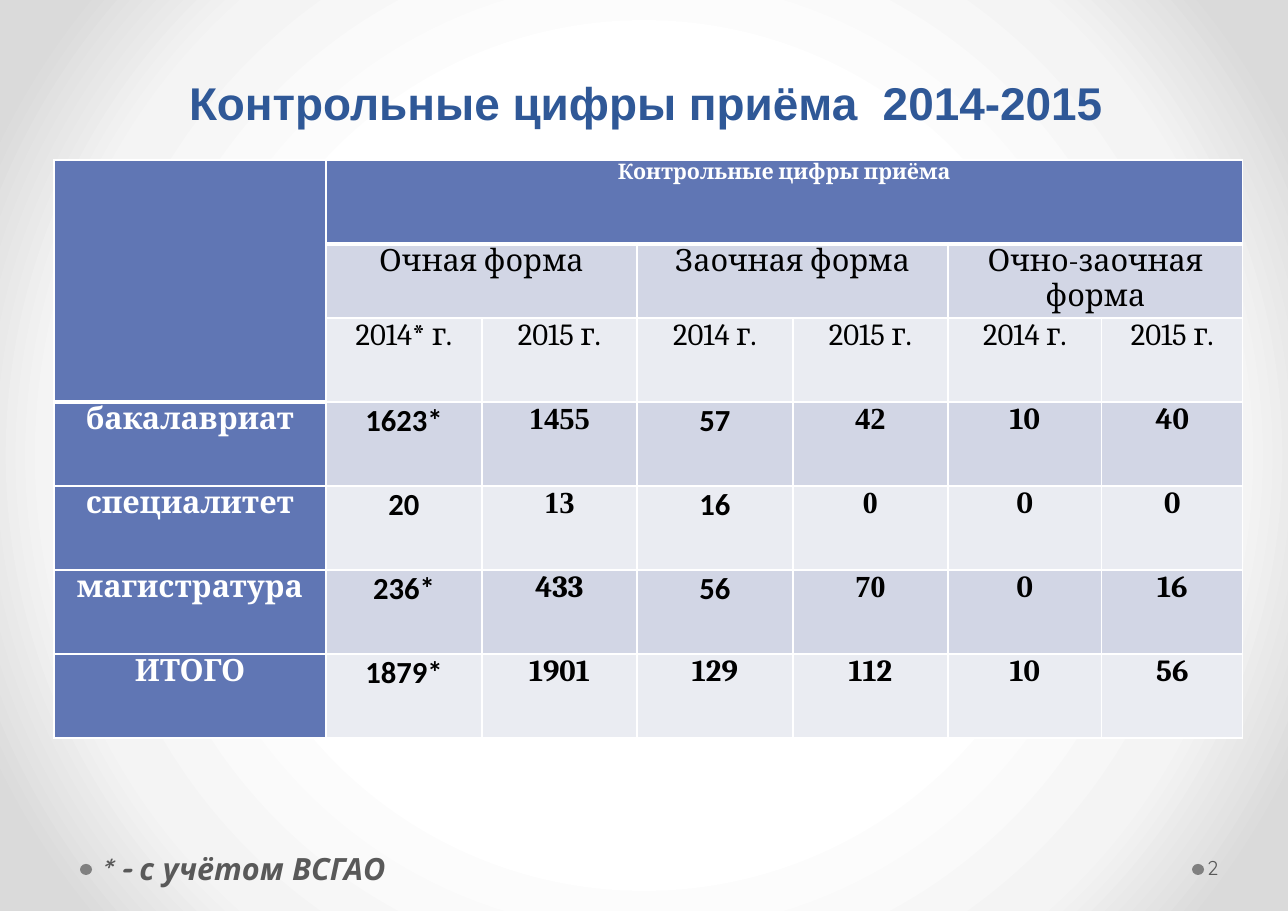
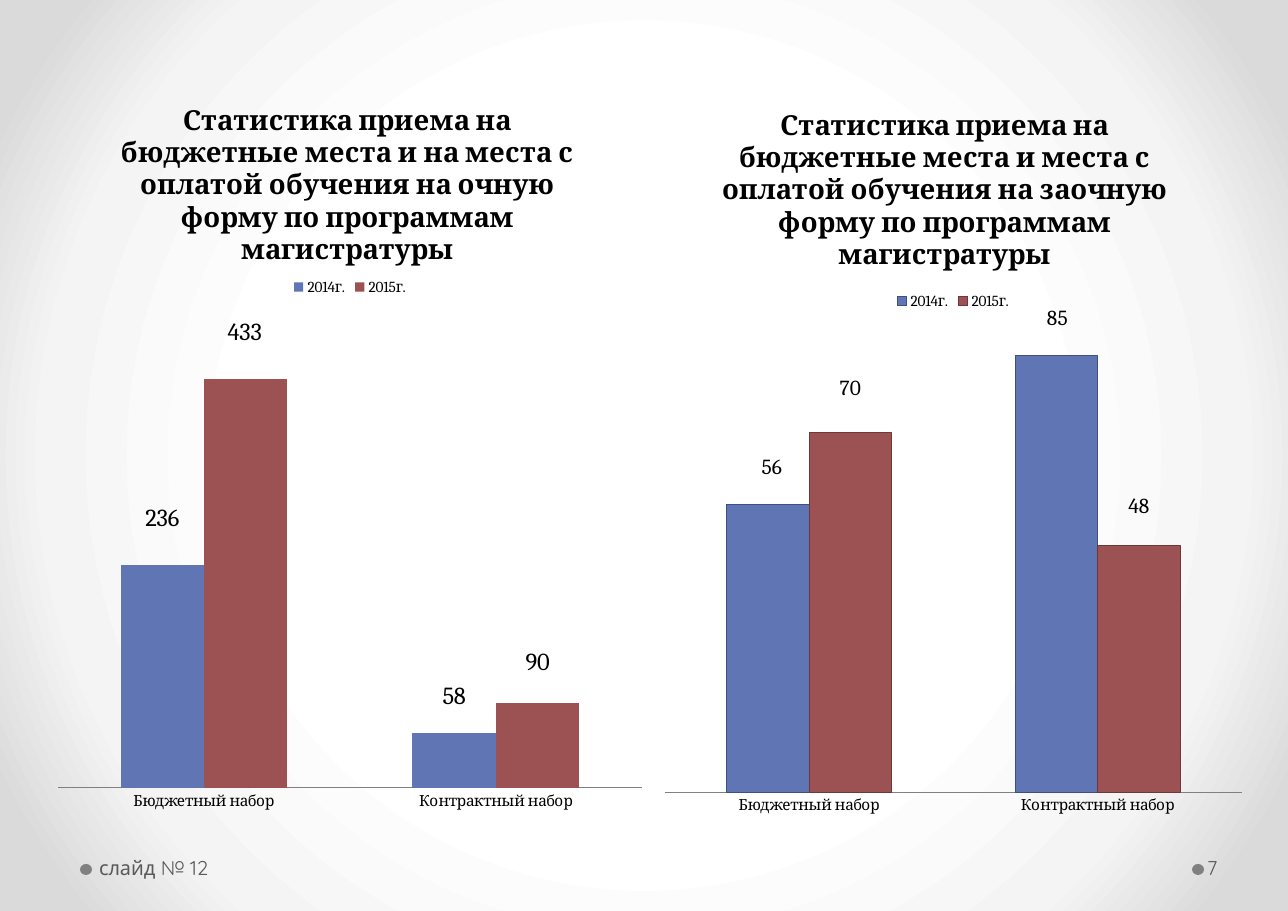
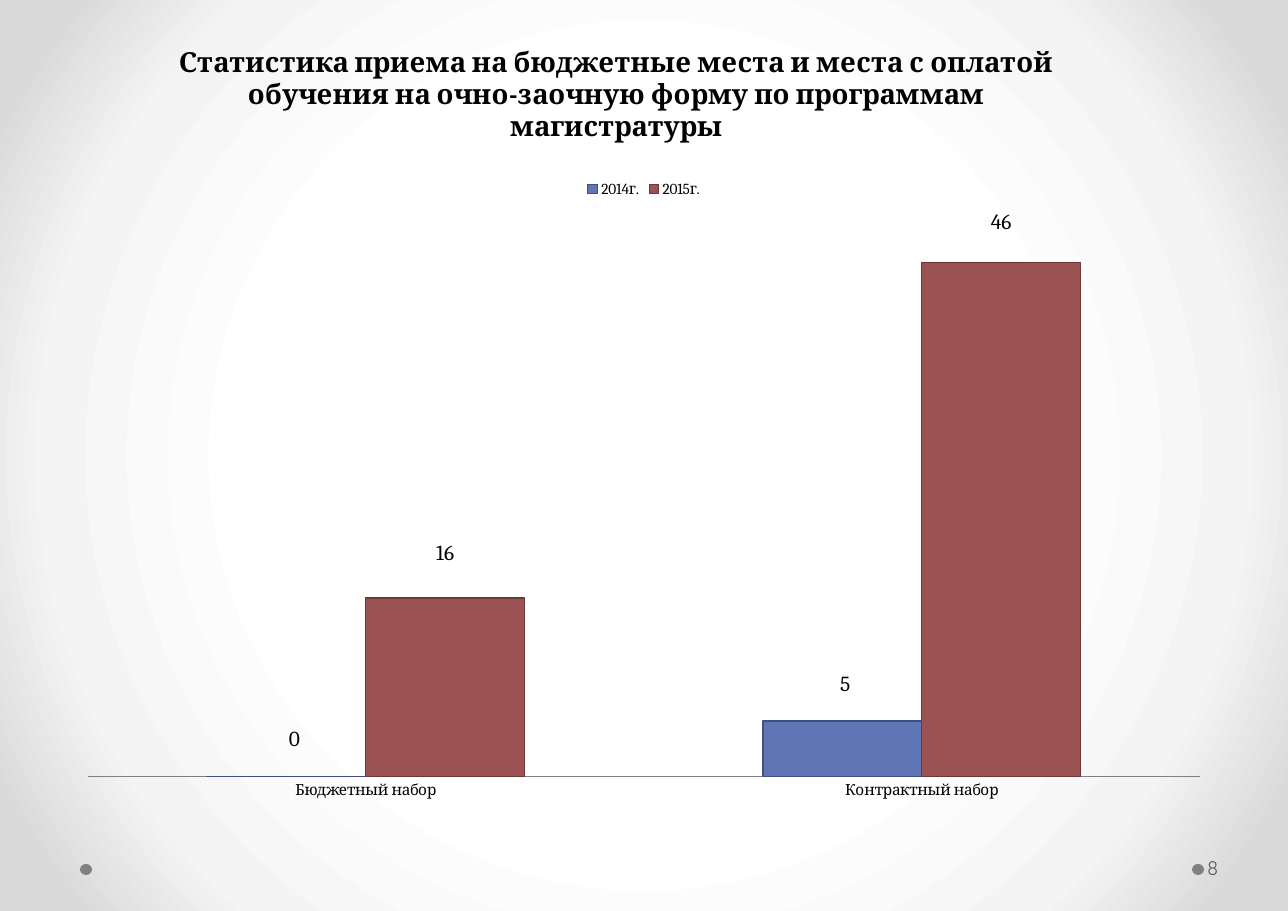
import lxml.etree
import pptx
import pptx.chart.data
import pptx.dml.color
import pptx.enum.chart
import pptx.enum.shapes
import pptx.enum.text
import pptx.oxml
import pptx.oxml.ns
import pptx.util

# Shared look
SCALE = 8298  # EMU in one px
PAGE_SIZE = (1288, 911)
WHITE, BLACK = "FFFFFF", "000000"
BLUE, RED, GREY = "6076B4", "9C5252", "808080"
TITLE_BLUE, FOOTER_GREY = "2F5897", "595959"
BAND_DARK, BAND_LIGHT = "D2D6E5", "EAECF2"
SERIF, FOOTER_FONT = "Cambria", "Quicksand"
BACKDROP = [(50, WHITE), (76, "F4F4F4"), (92, "DADADA")]
DOTS = [(1192, 864, 12, 11), (80, 864, 12, 11)]
FOOTER_BOX = (93, 844, 401, 48)
NUMBER_BOX = (1204, 844, 79, 48)

qn = pptx.oxml.ns.qn
ALIGN = pptx.enum.text.PP_ALIGN
MIDDLE = pptx.enum.text.MSO_ANCHOR.MIDDLE


def px(length):
    return pptx.util.Emu(round(length * SCALE))


def place(box):
    return [px(length) for length in box]


def colour(value):
    return pptx.dml.color.RGBColor.from_string(value)


def write_text(frame, text, size=20, font=SERIF, color=BLACK, bold=False,
               italic=False, align=None):
    para = frame.paragraphs[0]
    if align is not None:
        para.alignment = align
    span = para.add_run()
    span.text = text
    span.font.size = pptx.util.Pt(size)
    span.font.name = font
    span.font.bold = bold
    span.font.italic = italic
    span.font.color.rgb = colour(color)


def set_margins(item, left, top, right, bottom):
    item.margin_left, item.margin_top = px(left), px(top)
    item.margin_right, item.margin_bottom = px(right), px(bottom)


# Master: radial backdrop and footer dots
def set_backdrop(master):
    stops = "".join(f'<a:gs pos="{pos * 1000}"><a:srgbClr val="{value}"/></a:gs>'
                    for pos, value in BACKDROP)
    tree = master.element.cSld
    old = tree.find(qn("p:bg"))
    if old is not None:
        tree.remove(old)
    tree.insert(0, pptx.oxml.parse_xml(
        f'<p:bg {pptx.oxml.ns.nsdecls("p", "a")}><p:bgPr>'
        f'<a:gradFill rotWithShape="1"><a:gsLst>{stops}</a:gsLst>'
        '<a:path path="circle"><a:fillToRect l="50000" t="50000" r="50000" b="50000"/>'
        '</a:path></a:gradFill><a:effectLst/></p:bgPr></p:bg>'))


def add_master_dots(master, page):
    for number, box in enumerate(DOTS, start=1):
        dot = page.shapes.add_shape(pptx.enum.shapes.MSO_SHAPE.OVAL, *place(box))
        dot.name = f"Footer dot {number}"
        dot.shadow.inherit = False
        dot.fill.solid()
        dot.fill.fore_color.rgb = colour(GREY)
        dot.line.fill.background()
        dot.element.nvSpPr.cNvPr.set("id", str(100 + number))
        master.element.cSld.spTree.append(dot.element)


# Footer
def add_footer_text(page, box, text, left=6, right=12, size=13, **style):
    frame = page.shapes.add_textbox(*place(box)).text_frame
    frame.word_wrap = True
    frame.vertical_anchor = MIDDLE
    set_margins(frame, left, 6, right, 6)
    write_text(frame, text, size=size, font=FOOTER_FONT, color=FOOTER_GREY, **style)


def add_page_number(page, number):
    add_footer_text(page, NUMBER_BOX, str(number), left=3, right=6)


# Title
def place_title(page, box, text):
    title = page.shapes.title
    title.left, title.top, title.width, title.height = place(box)
    frame = title.text_frame
    frame.word_wrap = True
    frame.vertical_anchor = MIDDLE
    set_margins(frame, 12, 6, 12, 6)
    write_text(frame, text, size=30, font="Arial", color=TITLE_BLUE, bold=True,
               align=ALIGN.LEFT)


# Admission table
COLUMNS = [272, 156, 155, 156, 155, 154, 141]
ROWS = [84, 74, 84, 84, 84, 84, 84]
FORMS = ["Очная форма", "Заочная форма", "Очно-заочная форма"]
YEARS = ["2014* г.", "2015 г.", "2014 г.", "2015 г.", "2014 г.", "2015 г."]
LEVELS = [
    ("бакалавриат", ["1623*", "1455", "57", "42", "10", "40"], "CTCTMM"),
    ("специалитет", ["20", "13", "16", "0", "0", "0"], "CTCTMM"),
    ("магистратура", ["236*", "433", "56", "70", "0", "16"], "CMCTMM"),
    ("ИТОГО", ["1879*", "1901", "129", "112", "10", "56"], "CMMMMM"),
]
CELL_FONTS = {"C": "Calibri", "T": "Times New Roman", "M": SERIF}


def is_header_edge(row, column):
    return row == 0 or (column == 0 and 0 < row < 3)


def format_cell(cell, row, column):
    properties = cell._tc.get_or_add_tcPr()
    widths = {"lnL": 1, "lnR": 1,
              "lnT": 3 if row and is_header_edge(row - 1, column) else 1,
              "lnB": 3 if is_header_edge(row, column) else 1}
    for side, points in widths.items():
        line = lxml.etree.SubElement(properties, qn(f"a:{side}"), w=str(points * 12700))
        fill = lxml.etree.SubElement(line, qn("a:solidFill"))
        lxml.etree.SubElement(fill, qn("a:srgbClr"), val=WHITE)
    cell.fill.solid()
    band = BAND_DARK if row % 2 else BAND_LIGHT
    cell.fill.fore_color.rgb = colour(BLUE if row == 0 or column == 0 else band)
    set_margins(cell, 8, 0, 8, 0)


def add_admission_table(page, left, top):
    box = (left, top, sum(COLUMNS), sum(ROWS))
    table = page.shapes.add_table(len(ROWS), len(COLUMNS), *place(box)).table
    for column, width in enumerate(COLUMNS):
        table.columns[column].width = px(width)
    for row, height in enumerate(ROWS):
        table.rows[row].height = px(height)
        for column in range(len(COLUMNS)):
            format_cell(table.cell(row, column), row, column)

    def fill_cell(row, column, text, **style):
        write_text(table.cell(row, column).text_frame, text, align=ALIGN.CENTER, **style)

    # Header rows
    table.cell(0, 0).merge(table.cell(2, 0))
    table.cell(0, 1).merge(table.cell(0, 6))
    fill_cell(0, 1, "Контрольные цифры приёма", size=14, color=WHITE, bold=True)
    for index, form in enumerate(FORMS):
        column = 1 + 2 * index
        table.cell(1, column).merge(table.cell(1, column + 1))
        fill_cell(1, column, form)
    for column, year in enumerate(YEARS, start=1):
        fill_cell(2, column, year)

    # Body rows
    for row, (level, values, fonts) in enumerate(LEVELS, start=3):
        fill_cell(row, 0, level, color=WHITE, bold=True)
        for column, (value, key) in enumerate(zip(values, fonts), start=1):
            fill_cell(row, column, value, font=CELL_FONTS[key], bold=True)


# Column charts
def set_layout(element, index, values):
    old = element.find(qn("c:layout"))
    if old is not None:
        element.remove(old)
    layout = lxml.etree.Element(qn("c:layout"))
    manual = lxml.etree.SubElement(layout, qn("c:manualLayout"))
    for name, value in values.items():
        text = value if isinstance(value, str) else f"{value:.4f}"
        lxml.etree.SubElement(manual, qn(f"c:{name}"), val=text)
    element.insert(index, layout)


def add_column_chart(page, box, title, values_2014, values_2015, maximum, plot_box,
                     title_at, legend_at, label_shifts, label_size=14, outlined=True,
                     empty_series=None):
    left, top, width, height = box
    data = pptx.chart.data.CategoryChartData()
    data.categories = ["Бюджетный набор", "Контрактный набор"]
    data.add_series("2014г.", values_2014)
    data.add_series("2015г.", values_2015)
    if empty_series:
        data.add_series(empty_series, ())
    chart = page.shapes.add_chart(pptx.enum.chart.XL_CHART_TYPE.COLUMN_CLUSTERED,
                                  *place(box), data).chart
    chart.font.size = pptx.util.Pt(10)
    chart.font.name = SERIF
    chart.font.color.rgb = colour(BLACK)

    # A series without values keeps its name only
    if empty_series:
        unused = list(chart.element.iter(qn("c:ser")))[-1]
        unused.remove(unused.find(qn("c:val")))

    # Title and legend
    chart.has_title = True
    write_text(chart.chart_title.text_frame, title, size=18, bold=True)
    chart.has_legend = True
    chart.legend.position = pptx.enum.chart.XL_LEGEND_POSITION.TOP
    chart.legend.include_in_layout = False

    # Axes
    category_axis, value_axis = chart.category_axis, chart.value_axis
    category_axis.major_tick_mark = pptx.enum.chart.XL_TICK_MARK.NONE
    category_axis.format.line.color.rgb = colour(GREY)
    category_axis.format.line.width = pptx.util.Pt(0.75)
    value_axis.visible = False
    value_axis.has_major_gridlines = False
    value_axis.minimum_scale, value_axis.maximum_scale = 0, maximum

    # Columns and value labels
    plot = chart.plots[0]
    plot.gap_width, plot.overlap, plot.vary_by_categories = 150, 0, False
    for series, fill, edge in zip(plot.series, (BLUE, RED), ("3F4F82", "6C3838")):
        series.format.fill.solid()
        series.format.fill.fore_color.rgb = colour(fill)
        if outlined:
            series.format.line.color.rgb = colour(edge)
            series.format.line.width = pptx.util.Pt(0.75)
        else:
            series.format.line.fill.background()
        for index in range(2):
            label = series.points[index].data_label
            label.font.size = pptx.util.Pt(label_size)
            label.font.name = SERIF
            label.font.color.rgb = colour(BLACK)
            label.position = pptx.enum.chart.XL_LABEL_POSITION.OUTSIDE_END
    for leader in chart.element.iter(qn("c:showLeaderLines")):
        leader.set("val", "0")

    # Manual placing inside the chart box
    def edge_at(x, y):
        return {"xMode": "edge", "yMode": "edge",
                "x": (x - left) / width, "y": (y - top) / height}

    def part(name):
        return chart.element.find(".//" + qn(name))

    plot_left, plot_top, plot_width, plot_height = plot_box
    set_layout(part("c:title"), 1, edge_at(*title_at))
    set_layout(part("c:legend"), 1, edge_at(*legend_at))
    set_layout(part("c:plotArea"), 0, {
        "layoutTarget": "inner", **edge_at(plot_left, plot_top),
        "w": plot_width / width, "h": plot_height / height})
    for label, (right, down) in zip(chart.element.iter(qn("c:dLbl")), label_shifts):
        set_layout(label, 1, {"x": right / width, "y": down / height})


# Slides
def build_table_slide(page):
    place_title(page, (177, 68, 960, 68), "Контрольные цифры приёма  2014-2015")
    add_admission_table(page, 54, 160)
    add_footer_text(page, FOOTER_BOX, "* - с учётом ВСГАО", size=20, bold=True, italic=True)
    add_page_number(page, 2)


def build_two_chart_slide(page):
    add_footer_text(page, FOOTER_BOX, "слайд № 12")
    add_page_number(page, 7)
    add_column_chart(
        page, (45, 74, 609, 750),
        "Статистика приема на бюджетные места и на места с оплатой обучения "
        "на очную форму по программам магистратуры",
        (236, 58), (433, 90), 500, plot_box=(58, 316, 584, 472),
        title_at=(116, 97), legend_at=(289, 274),
        label_shifts=[(0, -29), (0, -19), (-1, -29), (0, -22)],
        label_size=16, outlined=False, empty_series="Категория 4")
    add_column_chart(
        page, (654, 83, 602, 746),
        "Статистика приема на бюджетные места и места с оплатой обучения "
        "на заочную форму по программам магистратуры",
        (56, 85), (70, 48), 90, plot_box=(665, 330, 577, 463),
        title_at=(717, 102), legend_at=(892, 288),
        label_shifts=[(4, -20), (1, -20), (0, -27), (0, -22)])


def build_one_chart_slide(page):
    add_page_number(page, 8)
    add_column_chart(
        page, (65, 39, 1159, 775),
        "Статистика приема на бюджетные места и места с оплатой обучения "
        "на очно-заочную форму по программам магистратуры",
        (0, 5), (16, 46), 50, plot_box=(88, 218, 1112, 559),
        title_at=(174, 37), legend_at=(583, 176),
        label_shifts=[(8, -20), (3, -20), (0, -28), (0, -23)])


def main():
    deck = pptx.Presentation()
    deck.slide_width, deck.slide_height = place(PAGE_SIZE)
    title_only, blank = deck.slide_layouts[5], deck.slide_layouts[6]
    pages = [deck.slides.add_slide(layout) for layout in (title_only, blank, blank)]
    set_backdrop(deck.slide_master)
    add_master_dots(deck.slide_master, pages[0])
    build_table_slide(pages[0])
    build_two_chart_slide(pages[1])
    build_one_chart_slide(pages[2])
    deck.save("out.pptx")


if __name__ == "__main__":
    main()
